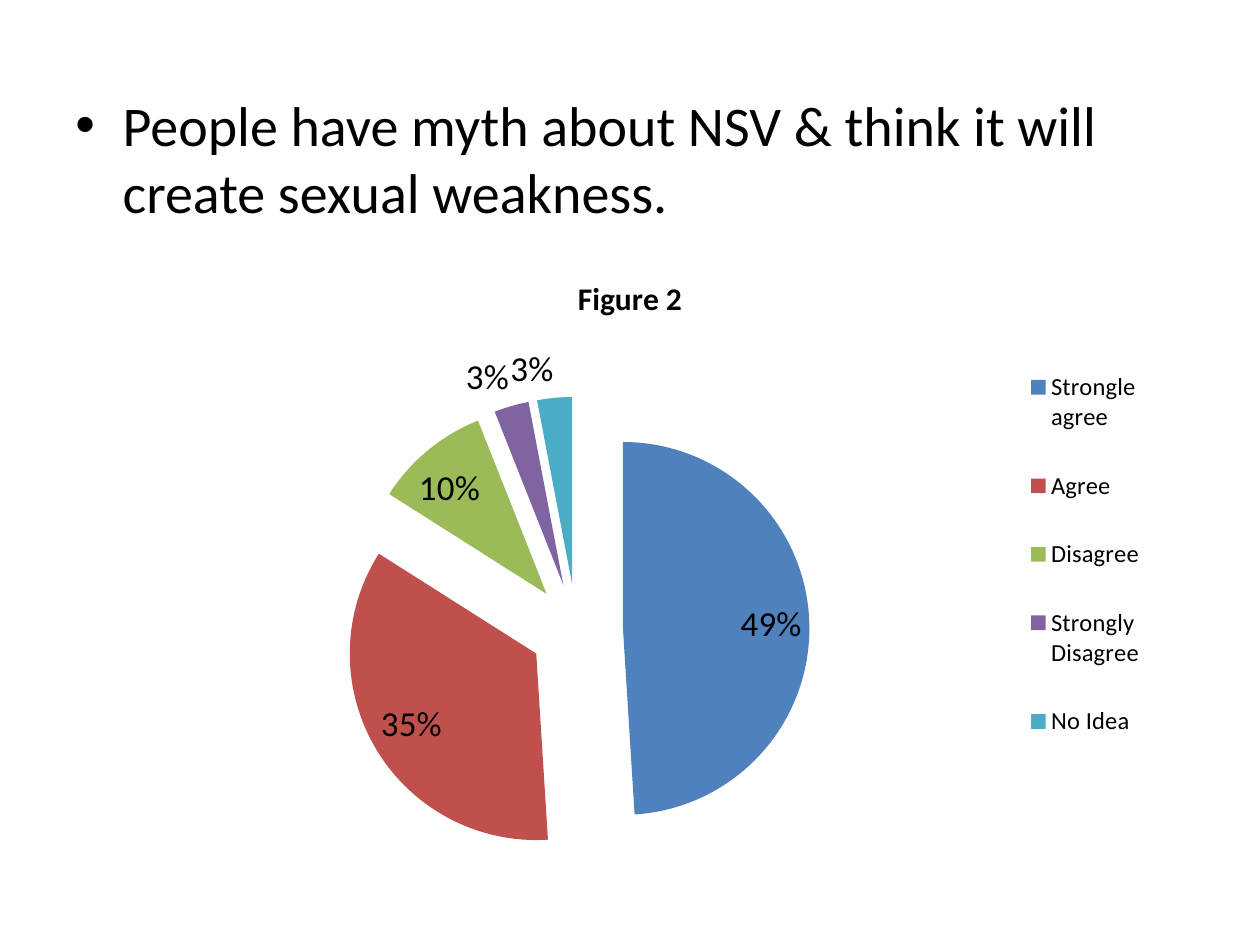
from dataclasses import dataclass

from lxml.etree import SubElement
from pptx import Presentation
from pptx.chart.data import CategoryChartData
from pptx.dml.color import RGBColor as RGB
from pptx.enum.chart import XL_CHART_TYPE as ChartType
from pptx.enum.chart import XL_LABEL_POSITION as LabelPos
from pptx.enum.chart import XL_LEGEND_POSITION as LegendPos
from pptx.oxml import parse_xml
from pptx.oxml.ns import nsdecls, qn
from pptx.util import Pt


@dataclass(frozen=True)
class Theme:
    font: str = "Calibri"
    text: str = "000000"
    body_size: float = 32
    title_size: float = 18
    label_size: float = 20
    legend_size: float = 14


@dataclass(frozen=True)
class Box:
    left: float
    top: float
    width: float
    height: float


@dataclass(frozen=True)
class Slice:
    name: str
    share: float
    color: str


THEME = Theme()
BODY = Box(36, 48, 648, 434)
CHART = Box(54, 144, 612, 360)
LEGEND = Box(0.86, 0.13, 0.13, 0.7)
PLOT = Box(0.23, 0.23, 0.44, 0.74)
HANGING = 27
EXPLOSION = 25
SLICES = [
    Slice("Strongle agree", 0.49, "4F81BD"),
    Slice("Agree", 0.35, "C0504D"),
    Slice("Disagree", 0.10, "9BBB59"),
    Slice("Strongly Disagree", 0.03, "8064A2"),
    Slice("No Idea", 0.03, "4BACC6"),
]


def points(box: Box) -> list[Pt]:
    return [Pt(v) for v in (box.left, box.top, box.width, box.height)]


def style_font(font, size: float, bold: bool = False) -> None:
    font.name = THEME.font
    font.size = Pt(size)
    font.bold = bold
    font.color.rgb = RGB.from_string(THEME.text)


def add_bullet_text(slide, box: Box, text: str) -> None:
    tf = slide.shapes.add_textbox(*points(box)).text_frame
    tf.word_wrap = True
    p = tf.paragraphs[0]
    p.text = text
    p.space_before = Pt(THEME.body_size * 0.2)
    style_font(p.runs[0].font, THEME.body_size)
    pPr = p._p.get_or_add_pPr()
    pPr.set("marL", str(Pt(HANGING)))
    pPr.set("indent", str(-Pt(HANGING)))
    SubElement(pPr, qn("a:buFont")).set("typeface", "Arial")
    SubElement(pPr, qn("a:buChar")).set("char", "•")


def manual_layout(box: Box, target: str = ""):
    inner = f'<c:layoutTarget val="{target}"/>' if target else ""
    return parse_xml(
        f'<c:layout {nsdecls("c")}><c:manualLayout>{inner}'
        '<c:xMode val="edge"/><c:yMode val="edge"/>'
        f'<c:x val="{box.left}"/><c:y val="{box.top}"/>'
        f'<c:w val="{box.width}"/><c:h val="{box.height}"/>'
        "</c:manualLayout></c:layout>"
    )


def set_layout(element, layout) -> None:
    for old in element.findall(qn("c:layout")):
        element.remove(old)
    legend_pos = element.find(qn("c:legendPos"))
    element.insert(0 if legend_pos is None else 1, layout)


def add_pie(slide, box: Box, title: str, slices: list[Slice]) -> None:
    data = CategoryChartData(number_format="0%")
    data.categories = [s.name for s in slices]
    data.add_series(title, [s.share for s in slices])
    chart = slide.shapes.add_chart(ChartType.PIE, *points(box), data).chart
    style_font(chart.font, 10)

    chart.has_title = True
    tf = chart.chart_title.text_frame
    tf.text = title
    style_font(tf.paragraphs[0].runs[0].font, THEME.title_size, True)
    chart.chart_title.include_in_layout = False

    chart.has_legend = True
    chart.legend.position = LegendPos.RIGHT
    chart.legend.include_in_layout = False
    style_font(chart.legend.font, THEME.legend_size)
    set_layout(chart.legend._element, manual_layout(LEGEND))

    plot = chart.plots[0]
    plot.vary_by_categories = True
    set_layout(plot._element.getparent(), manual_layout(PLOT, "inner"))
    series = plot.series[0]
    for i, s in enumerate(slices):
        fill = series.points[i].format.fill
        fill.solid()
        fill.fore_color.rgb = RGB.from_string(s.color)
    explosion = parse_xml(f'<c:explosion {nsdecls("c")} val="{EXPLOSION}"/>')
    series._element.find(qn("c:dPt")).addprevious(explosion)
    for point in series._element.findall(qn("c:dPt")):
        slice_explosion = parse_xml(f'<c:explosion {nsdecls("c")} val="{EXPLOSION}"/>')
        point.find(qn("c:spPr")).addprevious(slice_explosion)

    labels = series.data_labels
    labels.show_value = True
    labels.show_percentage = False
    labels.number_format = "0%"
    labels.number_format_is_linked = False
    labels.position = LabelPos.BEST_FIT
    style_font(labels.font, THEME.label_size)


def main() -> None:
    prs = Presentation()
    prs.slide_width, prs.slide_height = Pt(720), Pt(540)
    slide = prs.slides.add_slide(prs.slide_layouts[6])
    add_bullet_text(
        slide, BODY, "People have myth about NSV & think it will create sexual weakness."
    )
    add_pie(slide, CHART, "Figure 2", SLICES)
    prs.save("out.pptx")


if __name__ == "__main__":
    main()
